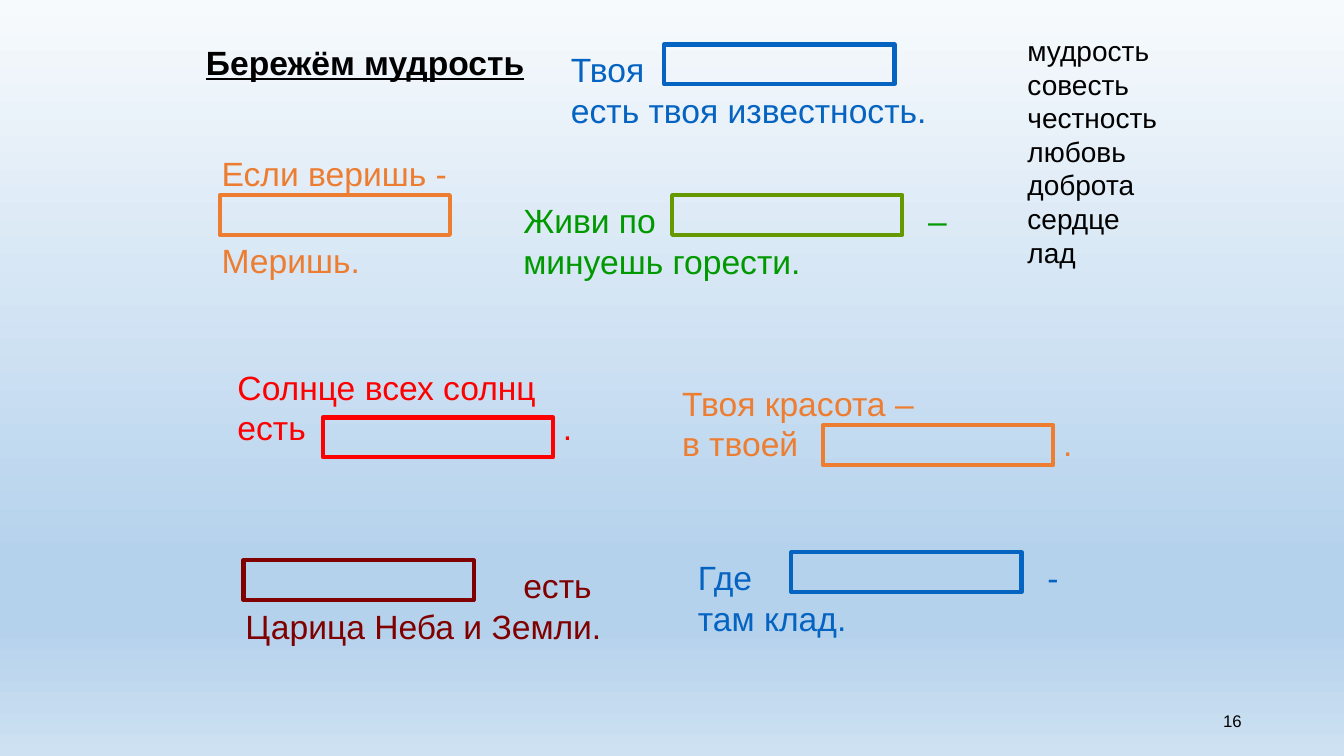
from copy import deepcopy
from dataclasses import dataclass

from lxml import etree
from pptx import Presentation
from pptx.dml.color import RGBColor
from pptx.enum.shapes import MSO_SHAPE
from pptx.enum.text import MSO_ANCHOR, MSO_AUTO_SIZE, PP_ALIGN
from pptx.oxml.ns import qn
from pptx.util import Inches, Mm, Pt

RECT = MSO_SHAPE.RECTANGLE
TOP, MIDDLE = MSO_ANCHOR.TOP, MSO_ANCHOR.MIDDLE
LEFT, RIGHT = PP_ALIGN.LEFT, PP_ALIGN.RIGHT
NO_AUTOFIT = MSO_AUTO_SIZE.NONE
TITLE_ONLY = 5

CELL = Mm(2)
COL_SHIFT, ROW_SHIFT = 0.33, 0.4
BLANK_COLS, BLANK_ROWS = 29, 5


@dataclass(frozen=True)
class Theme:
    """Colours, font and type sizes of the slide."""
    font: str = "Arial"
    verse: int = 24
    words: int = 20
    number: int = 12
    outline: int = 3
    black: str = "000000"
    orange: str = "ED7D31"
    red: str = "FF0000"
    blue: str = "0563C1"
    maroon: str = "800000"
    green: str = "009900"
    olive: str = "669900"
    sky: tuple = ((0, "F7FAFD"), (0.74, "B5D2EC"), (0.83, "B5D2EC"), (1, "CEE1F2"))


THEME = Theme()


def grid(col, row, cols, rows):
    """Turn grid columns and rows into left, top, width and height."""
    cells = (col - COL_SHIFT, row - ROW_SHIFT, cols, rows)
    return [int(CELL * n) for n in cells]


def paint_background(s):
    """Fill the slide with the vertical sky gradient."""
    fill = s.background.fill
    fill.gradient()
    fill.gradient_angle = 270
    stop_list = s.element.find(".//" + qn("a:gsLst"))
    for _ in range(len(THEME.sky) - len(stop_list)):
        stop_list.append(deepcopy(stop_list[0]))
    for stop, (position, color) in zip(fill.gradient_stops, THEME.sky):
        stop.color.rgb = RGBColor.from_string(color)
        stop.position = position


def write(sp, lines, color, size, bold=False, align=LEFT, anchor=TOP, tab=None):
    """Write lines into a shape, with an optional tab stop in grid cells."""
    tf = sp.text_frame
    tf.word_wrap = True
    tf.auto_size = NO_AUTOFIT
    tf.vertical_anchor = anchor
    p = tf.paragraphs[0]
    p.alignment = align
    if tab:
        tabs = etree.SubElement(p._p.get_or_add_pPr(), qn("a:tabLst"))
        etree.SubElement(tabs, qn("a:tab"), pos=str(int(CELL * tab)), algn="l")
    for i, line in enumerate(lines):
        if i:
            p.add_line_break()
        r = p.add_run()
        r.text = line
        r.font.name = THEME.font
        r.font.size = Pt(size)
        r.font.bold = bold
        r.font.underline = bold
        r.font.color.rgb = RGBColor.from_string(color)


def add_title(s, text, place):
    """Move the title placeholder and write the heading in it."""
    sp = s.shapes.title
    sp.left, sp.top, sp.width, sp.height = grid(*place)
    write(sp, [text], THEME.black, THEME.verse, bold=True)


def add_text(s, place, lines, color, size=THEME.verse, **layout):
    """Add a text box on the grid."""
    write(s.shapes.add_textbox(*grid(*place)), lines, color, size, **layout)


def add_blank(s, col, row, color):
    """Add an empty frame for a missing word."""
    sp = s.shapes.add_shape(RECT, *grid(col, row, BLANK_COLS, BLANK_ROWS))
    sp.shadow.inherit = False
    sp.fill.background()
    sp.line.color.rgb = RGBColor.from_string(color)
    sp.line.width = Pt(THEME.outline)


def main():
    """Build the proverb exercise and save it."""
    prs = Presentation()
    prs.slide_width, prs.slide_height = Inches(13.33), Inches(7.5)
    s = prs.slides.add_slide(prs.slide_layouts[TITLE_ONLY])
    paint_background(s)
    add_title(s, "Бережём мудрость", (25, 5, 46, 6))

    t = THEME
    verses = [
        ((27, 19, 33, 6), ["Если веришь -"], t.orange, None),
        ((27, 30, 33, 6), ["Меришь."], t.orange, None),
        ((29, 46, 47, 13), ["Солнце всех солнц", "есть\t."], t.red, 41),
        ((71, 6, 51, 12), ["Твоя", "есть твоя известность."], t.blue, None),
        ((30, 71, 51, 12), ["\tесть", "Царица Неба и Земли."], t.maroon, 35),
        ((65, 25, 59, 12), ["Живи по\t–", "минуешь горести."], t.green, 51),
        ((85, 48, 55, 12), ["Твоя красота –", "в твоей\t."], t.orange, 48),
        ((87, 70, 51, 12), ["Где\t-", "там клад."], t.blue, 44),
    ]
    for place, lines, color, tab in verses:
        add_text(s, place, lines, color, tab=tab)

    blanks = [
        (28, 25, t.orange), (41, 53, t.red), (84, 6, t.blue), (31, 71, t.maroon),
        (85, 25, t.olive), (104, 54, t.orange), (100, 70, t.blue),
    ]
    for col, row, color in blanks:
        add_blank(s, col, row, color)

    words = ["мудрость", "совесть", "честность", "любовь", "доброта", "сердце", "лад"]
    add_text(s, (128.5, 4, 20, 34), words, t.black, t.words)
    add_text(s, (120, 88.7, 38, 5), ["16"], t.black, t.number, align=RIGHT, anchor=MIDDLE)
    prs.save("out.pptx")


if __name__ == "__main__":
    main()
